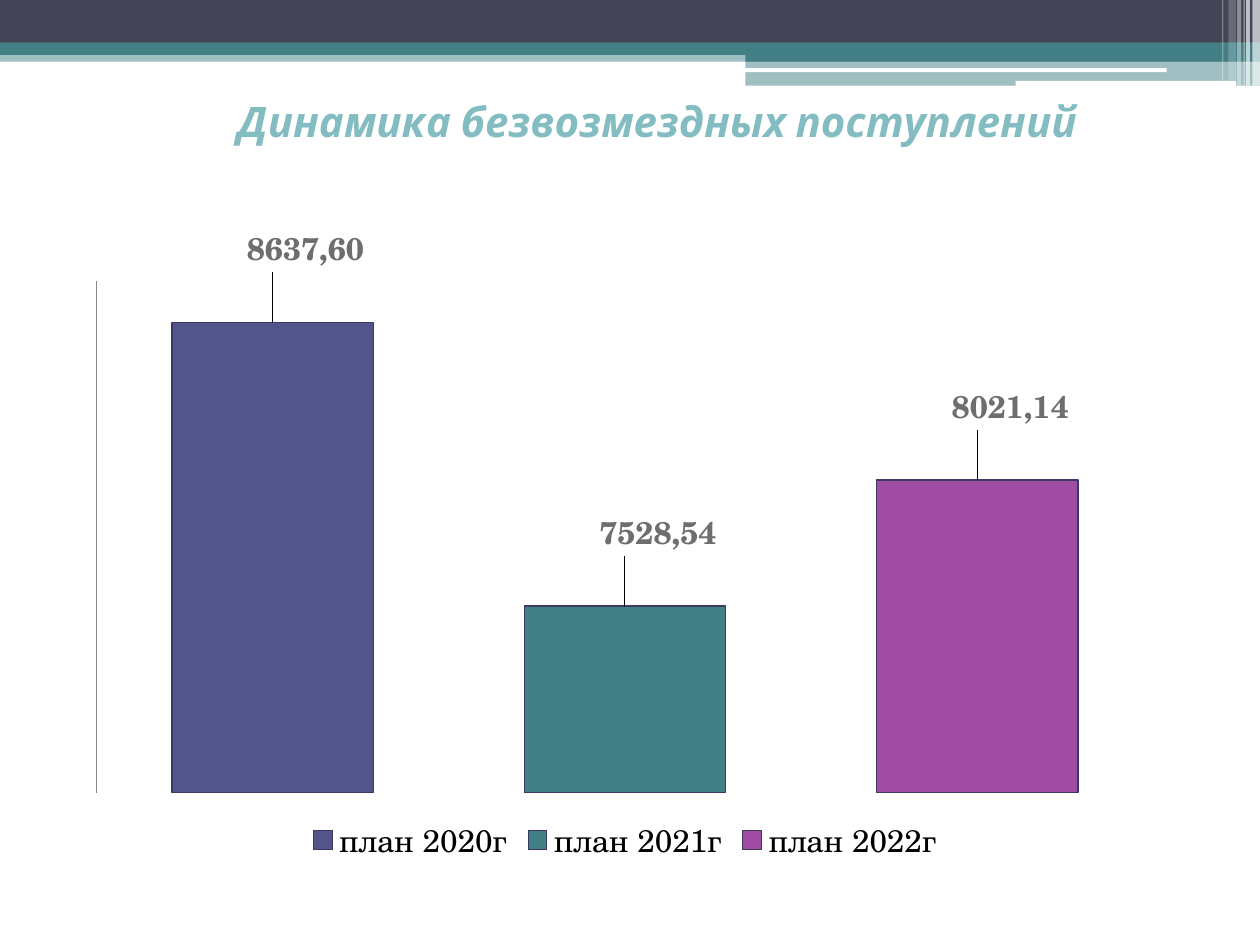
from lxml import etree
from pptx import Presentation
from pptx.chart.data import CategoryChartData
from pptx.dml.color import RGBColor
from pptx.enum.chart import XL_CHART_TYPE, XL_LEGEND_POSITION, XL_TICK_LABEL_POSITION, XL_TICK_MARK
from pptx.enum.shapes import MSO_SHAPE
from pptx.enum.text import MSO_ANCHOR, MSO_AUTO_SIZE, PP_ALIGN
from pptx.oxml import parse_xml
from pptx.oxml.ns import nsdecls, qn
from pptx.util import Pt

RECTANGLE = MSO_SHAPE.RECTANGLE
ROUNDED = MSO_SHAPE.ROUNDED_RECTANGLE
COLUMNS = XL_CHART_TYPE.COLUMN_CLUSTERED
BOTTOM = XL_LEGEND_POSITION.BOTTOM
NO_LABELS = XL_TICK_LABEL_POSITION.NONE
NO_TICKS = XL_TICK_MARK.NONE
MIDDLE = MSO_ANCHOR.MIDDLE
NO_FIT = MSO_AUTO_SIZE.NONE
CENTER = PP_ALIGN.CENTER

TITLE_FONT = "Karla"
CHART_FONT = "TeX Gyre Schola"
NAVY, TEAL, WHITE = "424456", "438086", "FFFFFF"

BANDS = [
    (0, 28.8, 720, 6.5, TEAL, 50),
    (0, 0, 720, 24.5, NAVY, 100),
    (0, 24.2, 720, 7.2, TEAL, 100),
    (426, 28, 294, 7.2, TEAL, 100),
    (426, 35, 294, 14, TEAL, 50),
]
RULES = [(425.5, 39, 241.2, 2.2), (580.3, 46.2, 126, 2.9)]
STRIPES = [
    (715.7, 4.3, 49, 65),
    (712.1, 2.2, 49, 65),
    (710.6, 0.7, 49, 60),
    (707, 2.2, 49, 40),
    (702, 4.3, 46.1, 20),
    (698.4, 0.7, 46.1, 30),
]
BARS = [
    ("план 2020г", 8637.6, "53548A"),
    ("план 2021г", 7528.54, "438086"),
    ("план 2022г", 8021.14, "A04DA3"),
]


def rgb(value):
    return RGBColor.from_string(value)


def style_font(font, name, size, color, bold=False, italic=False):
    font.name = name
    font.size = Pt(size)
    font.bold = bold
    font.italic = italic
    font.color.rgb = rgb(color)


def add_block(slide, left, top, width, height, color, opacity=100, kind=RECTANGLE):
    block = slide.shapes.add_shape(kind, Pt(left), Pt(top), Pt(width), Pt(height))
    block.shadow.inherit = False
    block.fill.solid()
    block.fill.fore_color.rgb = rgb(color)
    block.line.fill.background()
    if opacity < 100:
        color_node = block.fill._xPr.find(".//" + qn("a:srgbClr"))
        etree.SubElement(color_node, qn("a:alpha"), val=str(opacity * 1000))


def add_header(slide):
    for band in BANDS:
        add_block(slide, *band)
    for rule in RULES:
        add_block(slide, *rule, WHITE, kind=ROUNDED)
    for left, width, height, opacity in STRIPES:
        add_block(slide, left, 0, width, height, WHITE, opacity)


def set_title(slide, text):
    title = slide.shapes.title
    title.left, title.top, title.width, title.height = Pt(42.5), Pt(43.2), Pt(641.5), Pt(51)
    frame = title.text_frame
    frame.auto_size = NO_FIT
    frame.vertical_anchor = MIDDLE
    frame.margin_left = Pt(32)
    frame.text = text
    para = frame.paragraphs[0]
    para.alignment = CENTER
    style_font(para.font, TITLE_FONT, 24, "83BCC1", bold=True, italic=True)


def manual_layout(x, y, size=None):
    settings = [("x", x), ("y", y)]
    if size:
        edges = [("layoutTarget", "inner"), ("xMode", "edge"), ("yMode", "edge")]
        settings = edges + settings + [("w", size[0]), ("h", size[1])]
    content = "".join(f'<c:{tag} val="{value}"/>' for tag, value in settings)
    return parse_xml(
        f'<c:layout {nsdecls("c")}><c:manualLayout>{content}</c:manualLayout></c:layout>'
    )


def style_bar(point, value, color):
    fill = point.format.fill
    fill.solid()
    fill.fore_color.rgb = rgb(color)
    point.format.line.color.rgb = rgb("3B3A64")
    point.format.line.width = Pt(0.75)
    frame = point.data_label.text_frame
    frame.text = f"{value:.2f}".replace(".", ",")
    style_font(frame.paragraphs[0].runs[0].font, CHART_FONT, 18, "6E6E6E", bold=True)
    label = point.data_label._dLbl
    label.find(qn("c:idx")).addnext(manual_layout(0.03, -0.07))


def style_axes(chart):
    chart.category_axis.visible = False
    axis = chart.value_axis
    axis.minimum_scale = 6800
    axis.maximum_scale = 8800
    axis.has_major_gridlines = False
    axis.major_tick_mark = NO_TICKS
    axis.minor_tick_mark = NO_TICKS
    axis.tick_label_position = NO_LABELS
    axis.format.line.color.rgb = rgb("868686")
    axis.format.line.width = Pt(0.75)


def add_income_chart(slide):
    names, values, _ = zip(*BARS)
    data = CategoryChartData()
    data.categories = names
    data.add_series("Series 1", values)
    chart = slide.shapes.add_chart(
        COLUMNS, Pt(42.5), Pt(128.2), Pt(629.3), Pt(368.6), data
    ).chart
    style_font(chart.font, CHART_FONT, 18, "000000")
    chart.has_title = False
    chart.has_legend = True
    chart.legend.position = BOTTOM
    chart.legend.include_in_layout = False
    style_axes(chart)
    plot = chart.plots[0]
    plot.gap_width = 75
    plot.vary_by_categories = True
    series = plot.series[0]
    series.data_labels.show_value = True
    for index, (_, value, color) in enumerate(BARS):
        style_bar(series.points[index], value, color)
    area = chart._chartSpace.find(".//" + qn("c:plotArea"))
    for layout in area.findall(qn("c:layout")):
        area.remove(layout)
    area.insert(0, manual_layout(0.02, 0.08, (0.96, 0.8)))


def main():
    deck = Presentation()
    deck.slide_width = Pt(720)
    deck.slide_height = Pt(540)
    slide = deck.slides.add_slide(deck.slide_layouts[5])
    add_header(slide)
    set_title(slide, "Динамика безвозмездных поступлений")
    add_income_chart(slide)
    deck.save("out.pptx")


if __name__ == "__main__":
    main()
